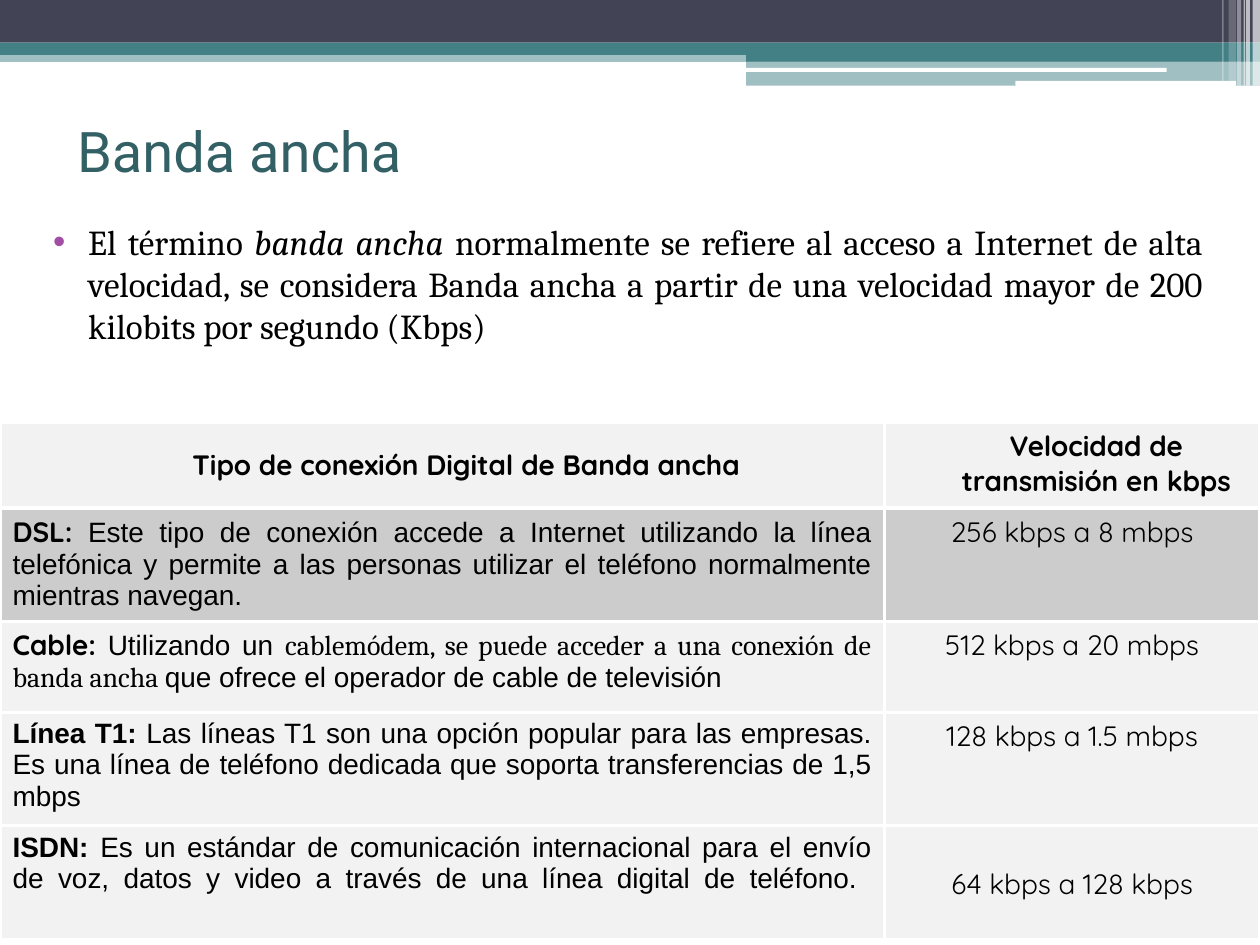
from typing import NamedTuple

from lxml import etree
from pptx import Presentation
from pptx.dml.color import RGBColor
from pptx.enum.shapes import MSO_SHAPE
from pptx.enum.text import MSO_ANCHOR, PP_ALIGN
from pptx.oxml.ns import qn
from pptx.util import Cm, Pt

RECT, ROUND = MSO_SHAPE.RECTANGLE, MSO_SHAPE.ROUNDED_RECTANGLE
TOP, MID = MSO_ANCHOR.TOP, MSO_ANCHOR.MIDDLE
LEFT, CENTER, JUST = PP_ALIGN.LEFT, PP_ALIGN.CENTER, PP_ALIGN.JUSTIFY
HEX = {"navy": "424456", "teal": "438086", "white": "FFFFFF", "title": "326065",
       "bullet": "A04DA3", "black": "000000", "light": "F2F2F2", "gray": "CCCCCC"}
SANS, SERIF, ROUNDED, HEAD = "Arial", "Cambria", "Quicksand", "Roboto"
BREAK = "\n"


class Bar(NamedTuple):
    x: float
    y: float
    w: float
    h: float
    color: str
    alpha: int = 100
    kind: int = RECT


class Run(NamedTuple):
    text: str
    font: str = SANS
    bold: bool = False
    italic: bool = False


class Entry(NamedTuple):
    runs: list[Run]
    align: int = JUST
    margin: float = 0
    indent: float = 0
    anchor: int = TOP
    fill: str = "light"


def rgb(name: str) -> RGBColor:
    return RGBColor.from_string(HEX[name])


def draw_bar(slide, bar: Bar) -> None:
    shape = slide.shapes.add_shape(bar.kind, Cm(bar.x), Cm(bar.y), Cm(bar.w), Cm(bar.h))
    shape.shadow.inherit = False
    shape.line.fill.background()
    shape.fill.solid()
    shape.fill.fore_color.rgb = rgb(bar.color)
    if bar.alpha < 100:
        tint = shape.fill._xPr.find(qn("a:solidFill"))[0]
        etree.SubElement(tint, qn("a:alpha"), val=str(bar.alpha * 1000))


def write(para, runs: list[Run], size: int, color: str = "black") -> None:
    for item in runs:
        if item.text == BREAK:
            para.add_line_break()
            etree.SubElement(para._p[-1], qn("a:rPr"), sz=str(size * 100))
            continue
        run = para.add_run()
        run.text = item.text
        font = run.font
        font.name, font.size = item.font, Pt(size)
        font.bold, font.italic = item.bold, item.italic
        font.color.rgb = rgb(color)


def indent(para, margin: float, first: float) -> None:
    props = para._p.get_or_add_pPr()
    props.set("marL", str(Cm(margin)))
    props.set("indent", str(Cm(first)))


def edge(cell) -> None:
    props = cell._tc.get_or_add_tcPr()
    for side in ("lnL", "lnR", "lnT", "lnB"):
        line = etree.SubElement(props, qn(f"a:{side}"), w=str(Pt(2)))
        fill = etree.SubElement(line, qn("a:solidFill"))
        etree.SubElement(fill, qn("a:srgbClr"), val=HEX["white"])


def fill_cell(cell, entry: Entry) -> None:
    edge(cell)
    cell.fill.solid()
    cell.fill.fore_color.rgb = rgb(entry.fill)
    cell.vertical_anchor = entry.anchor
    para = cell.text_frame.paragraphs[0]
    para.alignment = entry.align
    indent(para, entry.margin, entry.indent)
    write(para, entry.runs, 16)


def header(text: str, anchor: int) -> Entry:
    return Entry([Run(text, ROUNDED, True)], CENTER, 0.97, anchor=anchor)


def speed(text: str, fill: str = "light") -> Entry:
    return Entry([Run(text, ROUNDED)], CENTER, 0.97, -0.97, fill=fill)


BARS = [
    Bar(0, 1.02, 25.4, 0.23, "teal", 50),
    Bar(0, 0, 25.4, 0.86, "navy"),
    Bar(0, 0.86, 25.4, 0.25, "teal"),
    Bar(15.04, 0.99, 10.36, 0.25, "teal"),
    Bar(15.04, 1.22, 10.36, 0.51, "teal", 50),
    Bar(15.01, 1.37, 8.51, 0.08, "white", kind=ROUND),
    Bar(20.47, 1.63, 4.45, 0.1, "white", kind=ROUND),
]
# Strips at the right edge: left, width, height, opacity
STRIPS = [(25.25, 0.15, 1.73, 65), (25.12, 0.08, 1.73, 65), (25.07, 0.03, 1.73, 60),
          (24.94, 0.08, 1.73, 40), (24.77, 0.15, 1.63, 20), (24.64, 0.03, 1.63, 30)]
BARS += [Bar(x, 0, w, h, "white", alpha) for x, w, h, alpha in STRIPS]

INTRO = [
    Run("El término ", SERIF),
    Run("banda ancha", SERIF, italic=True),
    Run(" normalmente se refiere al acceso a Internet de alta velocidad, se considera "
        "Banda ancha a partir de una velocidad mayor de 200 kilobits por segundo (Kbps)", SERIF),
]
COLS = [17.83, 7.57]
ROWS = [1.73, 2.29, 1.83, 2.29, 2.29]
CELLS = [
    [header("Tipo de conexión Digital de Banda ancha", MID),
     header("Velocidad de transmisión en kbps", TOP)],
    [Entry([Run("DSL: ", ROUNDED, True),
            Run("Este tipo de conexión accede a Internet utilizando la línea telefónica y "
                "permite a las personas utilizar el teléfono normalmente mientras navegan.")],
           fill="gray"),
     speed("256 kbps a 8 mbps", "gray")],
    [Entry([Run("Cable: ", ROUNDED, True),
            Run("Utilizando un "),
            Run("cablemódem, se puede acceder a una conexión de banda ancha ", SERIF),
            Run("que ofrece el operador de cable de televisión ")]),
     speed("512 kbps a 20 mbps")],
    [Entry([Run("Línea T1: ", bold=True),
            Run("Las líneas T1 son una opción popular para las empresas. Es una línea de "
                "teléfono dedicada que soporta transferencias de 1,5 mbps")]),
     speed("128 kbps a 1.5 mbps")],
    [Entry([Run("ISDN: ", bold=True),
            Run("Es un estándar de comunicación internacional para el envío de voz, datos y "
                "video a través de una línea digital de teléfono. "),
            Run(BREAK)]),
     Entry([Run(BREAK), Run("64 kbps a 128 kbps", ROUNDED), Run(BREAK)], CENTER)],
]


def main() -> None:
    deck = Presentation()
    deck.slide_width, deck.slide_height = Cm(25.4), Cm(19.05)
    slide = deck.slides.add_slide(deck.slide_layouts[5])

    # Top band
    for bar in BARS:
        draw_bar(slide, bar)

    # Title
    title = slide.shapes.title
    title.left, title.top, title.width, title.height = Cm(1.3), Cm(1.55), Cm(22.86), Cm(2.97)
    title.text_frame.vertical_anchor = MID
    para = title.text_frame.paragraphs[0]
    para.alignment = LEFT
    write(para, [Run("Banda ancha", HEAD)], 32, "title")

    # Bulleted intro
    frame = slide.shapes.add_textbox(Cm(0.51), Cm(4.32), Cm(24), Cm(3.4)).text_frame
    frame.word_wrap = True
    para = frame.paragraphs[0]
    para.alignment, para.space_before = JUST, Pt(3)
    indent(para, 1.02, -0.71)
    props = para._p.get_or_add_pPr()
    tint = etree.SubElement(props, qn("a:buClr"))
    etree.SubElement(tint, qn("a:srgbClr"), val=HEX["bullet"])
    etree.SubElement(props, qn("a:buFont"), typeface=SANS)
    etree.SubElement(props, qn("a:buChar"), char="•")
    write(para, INTRO, 20)

    # Table of connection types
    table = slide.shapes.add_table(len(ROWS), len(COLS), 0, Cm(8.51),
                                   Cm(sum(COLS)), Cm(sum(ROWS))).table
    table.first_row = table.horz_banding = False
    for col, width in zip(table.columns, COLS):
        col.width = Cm(width)
    for row, height, entries in zip(table.rows, ROWS, CELLS):
        row.height = Cm(height)
        for cell, entry in zip(row.cells, entries):
            fill_cell(cell, entry)

    deck.save("out.pptx")


if __name__ == "__main__":
    main()
